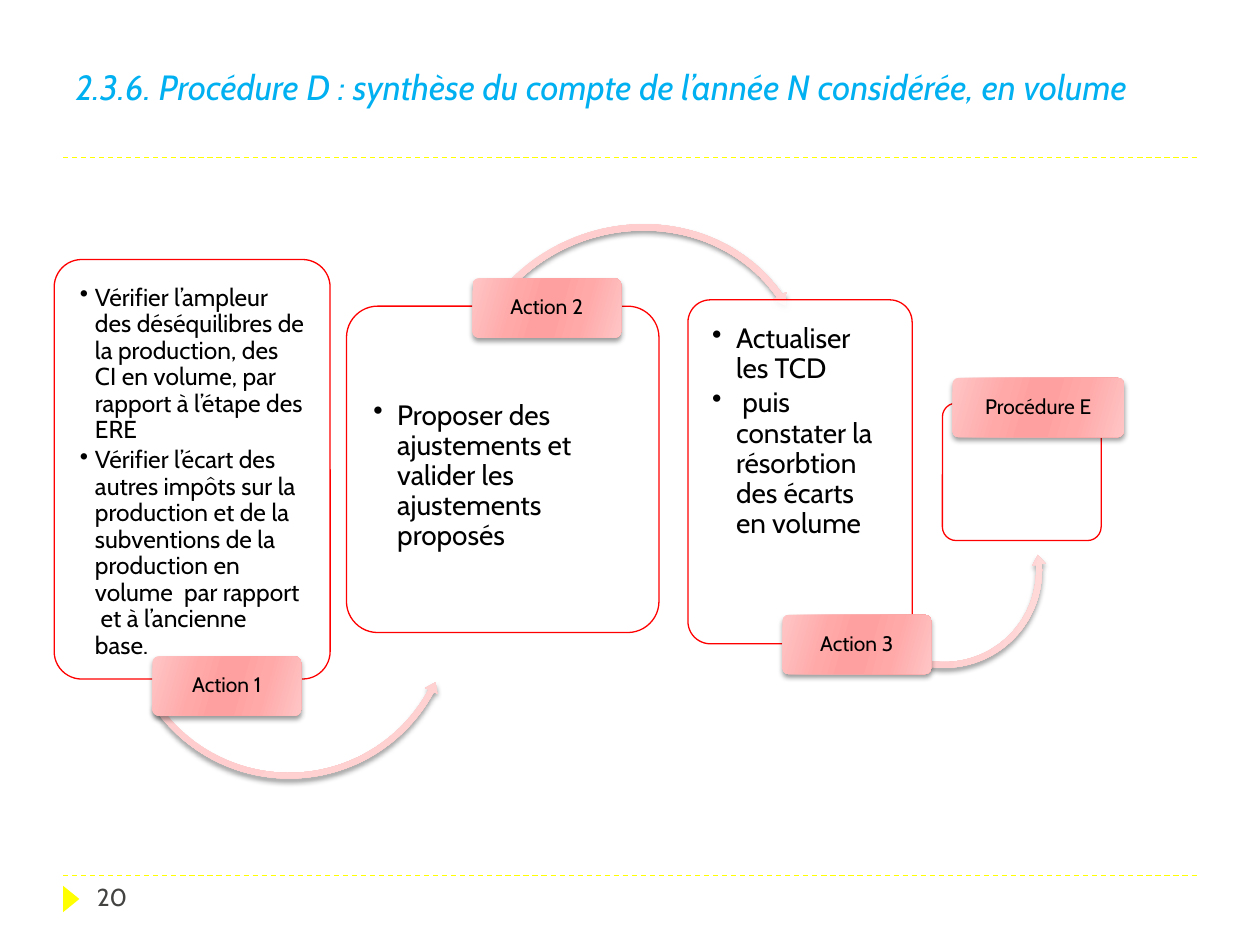
from dataclasses import dataclass

from lxml import etree
from pptx import Presentation
from pptx import util as u
from pptx.dml.color import RGBColor
from pptx.enum import dml, shapes, text
from pptx.oxml.ns import qn


@dataclass(frozen=True)
class Theme:
    font: str = "Cabin"
    title: str = "00B0F0"
    ink: str = "000000"
    number: str = "434342"
    rule: str = "FFFF00"
    card: str = "FFFFFF"
    border: str = "FF0000"
    tag_tones: tuple = ("FFC5C5", "FFA9A9", "FFA0A0")
    arrow_tones: tuple = ("FFDEDE", "FFD1D1", "FFCDCD")
    title_size: int = 20
    number_size: int = 14
    tag_size: int = 12


THEME = Theme()
SHAPE = shapes.MSO_SHAPE


def rgb(value):
    return RGBColor.from_string(value)


def place(box):
    return [u.Inches(length) for length in box]


def sub(parent, tag, **attributes):
    child = etree.SubElement(parent, qn(tag))
    for name, value in attributes.items():
        child.set(name, str(value))
    return child


def add_run(paragraph, words, size, color, italic=None):
    run = paragraph.add_run()
    run.text = words
    run.font.name = THEME.font
    run.font.size = u.Pt(size)
    run.font.italic = italic
    run.font.color.rgb = rgb(color)


def set_margins(frame, left, top, right, bottom):
    frame.margin_left, frame.margin_top = u.Inches(left), u.Inches(top)
    frame.margin_right, frame.margin_bottom = u.Inches(right), u.Inches(bottom)


def add_plain_shape(slide, kind, box):
    shape = slide.shapes.add_shape(kind, *place(box))
    shape.shadow.inherit = False
    shape.line.fill.background()
    return shape


def add_sheen(shape, tones):
    """Symmetrical gradient with a soft shadow below."""
    shape.fill.gradient()
    properties = shape._element.spPr
    gradient = properties.find(qn("a:gradFill"))
    for child in list(gradient):
        gradient.remove(child)
    gradient.set("rotWithShape", "1")
    stops = sub(gradient, "a:gsLst")
    for position, tone in zip((0, 30, 45, 55, 73, 100), tones + tones[::-1]):
        sub(sub(stops, "a:gs", pos=position * 1000), "a:srgbClr", val=tone)
    sub(gradient, "a:lin", ang=16 * 60000, scaled=0)
    shadow = sub(properties.find(qn("a:effectLst")), "a:outerShdw",
                 blurRad=u.Pt(3), dist=u.Pt(2), dir=90 * 60000, rotWithShape=0)
    sub(sub(shadow, "a:srgbClr", val=THEME.ink), "a:alpha", val=40000)


def add_title(slide, box, words):
    title = slide.shapes.title
    title.left, title.top, title.width, title.height = place(box)
    frame = title.text_frame
    frame.word_wrap = True
    frame.auto_size = text.MSO_AUTO_SIZE.NONE
    frame.vertical_anchor = text.MSO_ANCHOR.MIDDLE
    paragraph = frame.paragraphs[0]
    paragraph.alignment = text.PP_ALIGN.JUSTIFY
    paragraph.line_spacing = 0.87
    paragraph.space_before = u.Pt(0)
    add_run(paragraph, words, THEME.title_size, THEME.title, italic=True)


def add_rule(slide, left, top, width):
    rule = slide.shapes.add_connector(
        shapes.MSO_CONNECTOR.STRAIGHT, *place((left, top, left + width, top)))
    rule.line.color.rgb = rgb(THEME.rule)
    rule.line.width = u.Pt(0.75)
    rule.line.dash_style = dml.MSO_LINE.DASH
    sub(rule._element.spPr, "a:effectLst")


def add_footer(slide, box, number):
    left, top, width, height = box
    add_rule(slide, left, top, width)
    marker = add_plain_shape(slide, SHAPE.ISOSCELES_TRIANGLE,
                             (left - 0.04, top + 0.12, 0.21, 0.13))
    marker.rotation = 90
    marker.fill.solid()
    marker.fill.fore_color.rgb = rgb(THEME.rule)
    page = slide.shapes.add_textbox(*place((left + 0.17, top, 2.17, height)))
    page.text_frame.word_wrap = True
    add_run(page.text_frame.paragraphs[0], number, THEME.number_size, THEME.number)


def add_card(slide, box, points=(), size=16, indent=0.19, drop=0):
    """Outlined card; drop lowers the text below the top margin."""
    card = add_plain_shape(slide, SHAPE.ROUNDED_RECTANGLE, box)
    card.adjustments[0] = 0.1
    card.fill.solid()
    card.fill.fore_color.rgb = rgb(THEME.card)
    color = card._element.spPr.find(qn("a:solidFill")).find(qn("a:srgbClr"))
    sub(color, "a:alpha", val=90000)
    card.line.color.rgb = rgb(THEME.border)
    card.line.width = u.Pt(0.75)
    frame = card.text_frame
    frame.word_wrap = True
    frame.vertical_anchor = text.MSO_ANCHOR.TOP
    set_margins(frame, 0.14, 0.14 + drop, 0.14, 0.14)
    for index, point in enumerate(points):
        paragraph = frame.add_paragraph() if index else frame.paragraphs[0]
        paragraph.level = 1
        paragraph.alignment = text.PP_ALIGN.LEFT
        paragraph.line_spacing = 0.9
        paragraph.space_after = u.Pt(size * 0.15)
        properties = paragraph._p.get_or_add_pPr()
        properties.set("marL", str(u.Inches(indent)))
        properties.set("indent", str(-u.Inches(indent)))
        sub(properties, "a:buChar", char="•")
        add_run(paragraph, point, size, THEME.ink)


def add_tag(slide, box, label):
    tag = add_plain_shape(slide, SHAPE.ROUNDED_RECTANGLE, box)
    tag.adjustments[0] = 0.1
    add_sheen(tag, THEME.tag_tones)
    frame = tag.text_frame
    frame.word_wrap = True
    frame.vertical_anchor = text.MSO_ANCHOR.MIDDLE
    set_margins(frame, 0.03, 0.02, 0.03, 0.02)
    paragraph = frame.paragraphs[0]
    paragraph.alignment = text.PP_ALIGN.CENTER
    paragraph.line_spacing = 0.9
    add_run(paragraph, label, THEME.tag_size, THEME.ink)


def add_arc(slide, box, kind, rotation, band, head, angles):
    """Curved arrow: band and head in percent, angles in degrees."""
    arc = add_plain_shape(slide, kind, box)
    arc.rotation = rotation
    tip, end, start = (angle * 0.6 for angle in angles)
    for index, value in enumerate((band / 100, tip, end, start, head / 100)):
        arc.adjustments[index] = value
    add_sheen(arc, THEME.arrow_tones)


def add_step(slide, card, tag, label, arc=None, **card_text):
    add_card(slide, card, **card_text)
    if arc:
        add_arc(slide, *arc)
    add_tag(slide, tag, label)


def main():
    deck = Presentation()
    deck.slide_width, deck.slide_height = u.Inches(10), u.Inches(7.5)
    slide = deck.slides.add_slide(deck.slide_layouts[5])

    # Frame of the slide
    add_footer(slide, (0.5, 6.95, 9, 0.4), "20")
    add_rule(slide, 0.5, 1.25, 9)
    add_title(slide, (0.5, 0.17, 9, 1.08),
              "2.3.6. Procédure D : synthèse du compte de l’année N considérée, en volume")

    # Chain of actions, from left to right
    action = (1.18, 0.47)
    add_step(slide, (0.43, 2.06, 2.19, 3.33), (1.21, 5.21, *action), "Action 1",
             arc=((0.96, 3.54, 2.67, 2.67), SHAPE.LEFT_CIRCULAR_ARROW, 26.9,
                  1.7, 2, (3.41, 1.45, 118.86)),
             size=14, indent=0.12,
             points=("Vérifier l’ampleur des déséquilibres de la production, des CI en "
                     "volume, par rapport à l’étape des ERE",
                     "Vérifier l’écart des autres impôts sur la production et de la "
                     "subventions de la production en volume  par rapport  et à "
                     "l’ancienne base."))
    add_step(slide, (2.75, 2.43, 2.48, 2.59), (3.75, 2.21, *action), "Action 2",
             arc=((3.61, 1.76, 2.86, 2.66), SHAPE.CIRCULAR_ARROW, 338.5,
                  1.9, 2.2, (3.8, 348.63, 231.61)),
             drop=0.54,
             points=("Proposer des ajustements et valider les ajustements proposés",))
    add_step(slide, (5.46, 2.38, 1.78, 2.73), (6.21, 4.88, *action), "Action 3",
             arc=((6.69, 3.72, 1.61, 1.61), SHAPE.LEFT_CIRCULAR_ARROW, 0,
                  2.9, 3.3, (5.81, 356.6, 111.61)),
             points=("Actualiser les TCD",
                     " puis constater la résorbtion des écarts en volume"))
    add_step(slide, (7.48, 3.2, 1.26, 1.09), (7.56, 3, 1.36, 0.47), "Procédure E")

    deck.save("out.pptx")


if __name__ == "__main__":
    main()
